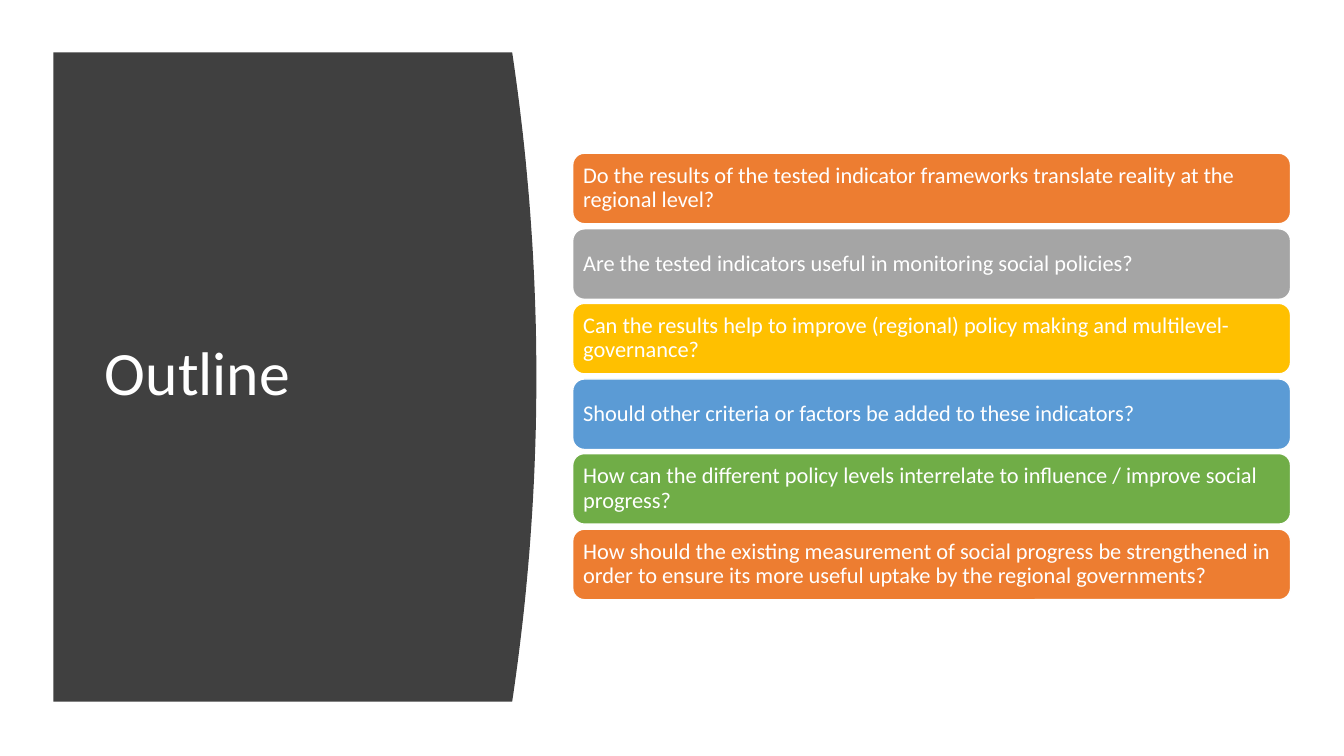
import dataclasses

import pptx
import pptx.dml.color
import pptx.enum.shapes
import pptx.enum.text
import pptx.shapes.autoshape
import pptx.slide
import pptx.text.text
import pptx.util

RGBColor = pptx.dml.color.RGBColor
WHITE = RGBColor(0xFF, 0xFF, 0xFF)
CHARCOAL = RGBColor(0x40, 0x40, 0x40)
ORANGE = RGBColor(0xED, 0x7D, 0x31)
GREY = RGBColor(0xA5, 0xA5, 0xA5)
GOLD = RGBColor(0xFF, 0xC0, 0x00)
BLUE = RGBColor(0x5B, 0x9B, 0xD5)
GREEN = RGBColor(0x70, 0xAD, 0x47)

FONT = "Calibri"
EMU_PER_PX = 9144

PANEL_LEFT, PANEL_TOP, PANEL_BOTTOM = 53, 52, 696
PANEL_CORNER, PANEL_BULGE = 508, 24
CURVE_STEPS = 48

CARD_LEFT, CARD_WIDTH, CARD_HEIGHT = 568, 712, 70
FIRST_CARD_TOP, LAST_CARD_TOP = 152, 525
CARD_INSET = 7


@dataclasses.dataclass(frozen=True)
class Question:
    text: str
    fill: RGBColor


QUESTIONS = [
    Question("Do the results of the tested indicator frameworks translate reality at the regional level?", ORANGE),
    Question("Are the tested indicators useful in monitoring social policies?", GREY),
    Question("Can the results help to improve (regional) policy making and multilevel-governance?", GOLD),
    Question("Should other criteria or factors be added to these indicators?", BLUE),
    Question("How can the different policy levels interrelate to influence / improve social progress?", GREEN),
    Question(
        "How should the existing measurement of social progress be strengthened in order "
        "to ensure its more useful uptake by the regional governments?",
        ORANGE,
    ),
]


def px(length: float) -> pptx.util.Emu:
    return pptx.util.Emu(round(length * EMU_PER_PX))


def write(frame: pptx.text.text.TextFrame, text: str, size: int) -> None:
    frame.text = text
    frame.word_wrap = True
    frame.auto_size = pptx.enum.text.MSO_AUTO_SIZE.NONE
    frame.vertical_anchor = pptx.enum.text.MSO_ANCHOR.MIDDLE
    paragraph = frame.paragraphs[0]
    paragraph.alignment = pptx.enum.text.PP_ALIGN.LEFT
    paragraph.line_spacing = 0.9
    font = paragraph.runs[0].font
    font.name = FONT
    font.size = pptx.util.Pt(size)
    font.color.rgb = WHITE


def draw_title(slide: pptx.slide.Slide) -> None:
    title = slide.shapes.title
    title.left, title.top, title.width, title.height = px(94), px(111), px(374), px(524)
    write(title.text_frame, "Outline", 44)


def draw_panel(slide: pptx.slide.Slide) -> None:
    middle = (PANEL_TOP + PANEL_BOTTOM) / 2
    half_height = (PANEL_BOTTOM - PANEL_TOP) / 2
    curve = []
    for step in range(CURVE_STEPS + 1):
        offset = 2 * step / CURVE_STEPS - 1
        x = PANEL_CORNER + PANEL_BULGE * (1 - offset**2)
        curve.append((px(x), px(middle + offset * half_height)))
    outline = slide.shapes.build_freeform(px(PANEL_LEFT), px(PANEL_TOP))
    outline.add_line_segments([*curve, (px(PANEL_LEFT), px(PANEL_BOTTOM))], close=True)
    panel = outline.convert_to_shape()
    panel.shadow.inherit = False
    panel.fill.solid()
    panel.fill.fore_color.rgb = CHARCOAL
    panel.line.fill.background()
    slide.shapes.title.element.addprevious(panel.element)


def draw_question(slide: pptx.slide.Slide, question: Question, top: int) -> None:
    card = slide.shapes.add_shape(
        pptx.enum.shapes.MSO_SHAPE.ROUNDED_RECTANGLE,
        px(CARD_LEFT), px(top), px(CARD_WIDTH), px(CARD_HEIGHT),
    )
    card.shadow.inherit = False
    card.fill.solid()
    card.fill.fore_color.rgb = question.fill
    card.line.color.rgb = WHITE
    card.line.width = pptx.util.Pt(1)
    frame = card.text_frame
    frame.margin_left = frame.margin_right = px(CARD_INSET)
    frame.margin_top = frame.margin_bottom = px(CARD_INSET)
    write(frame, question.text, 16)


def main() -> None:
    deck = pptx.Presentation()
    deck.slide_width, deck.slide_height = px(1333), px(750)
    slide = deck.slides.add_slide(deck.slide_layouts.get_by_name("Title Only"))
    draw_title(slide)
    draw_panel(slide)
    pitch = (LAST_CARD_TOP - FIRST_CARD_TOP) / (len(QUESTIONS) - 1)
    for row, question in enumerate(QUESTIONS):
        draw_question(slide, question, round(FIRST_CARD_TOP + row * pitch))
    deck.save("out.pptx")


if __name__ == "__main__":
    main()
